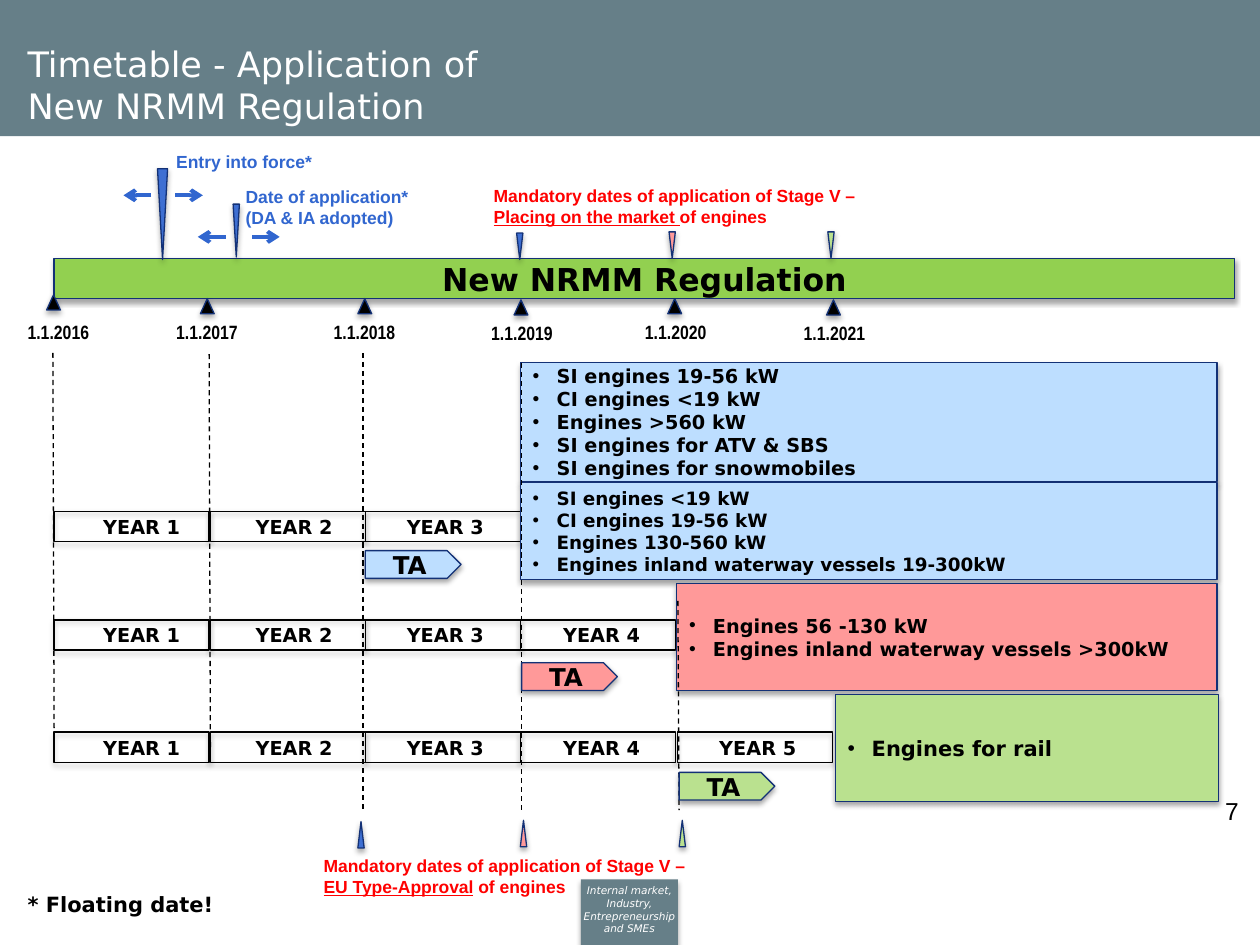
"""Build a one-slide timetable for the application of the New NRMM Regulation."""
from dataclasses import dataclass

from lxml import etree
from pptx import Presentation
from pptx import util as u
from pptx.dml.color import RGBColor
from pptx.enum import dml, shapes, text
from pptx.oxml import ns


@dataclass
class Theme:
    slate: str = "667F88"
    white: str = "FFFFFF"
    black: str = "000000"
    navy: str = "133176"
    lime: str = "92D050"
    cobalt: str = "3E6FD2"
    blue: str = "3166CF"
    sky: str = "BDDEFF"
    rose: str = "FF9999"
    leaf: str = "BAE18F"
    red: str = "FF0000"
    sans: str = "DejaVu Sans"
    arial: str = "Arial"
    narrow: str = "Arial Narrow"
    title: float = 20
    head: float = 18
    large: float = 14
    mid: float = 12
    body: float = 11
    dense: float = 10.5
    note: float = 10
    tiny: float = 6
    thin: float = 0.75
    thick: float = 2.25


theme = Theme()
deck = Presentation()
deck.slide_width, deck.slide_height = u.Inches(10), u.Inches(7.5)
slide = deck.slides.add_slide(deck.slide_layouts[6])
kinds = shapes.MSO_SHAPE
SHADOW = (
    '<a:effectLst xmlns:a="%s"><a:outerShdw blurRad="39400" dist="22900" dir="5400000" rotWithShape="0">'
    '<a:srgbClr val="000000"><a:alpha val="35000"/></a:srgbClr></a:outerShdw></a:effectLst>'
) % ns.nsdecls("a").split('"')[1]


def draw(kind, box, fill=None, line=theme.navy, shade=True, flip=False):
    shape = slide.shapes.add_shape(kind, *map(u.Inches, box))
    shape.shadow.inherit = False
    if fill:
        shape.fill.solid()
        shape.fill.fore_color.rgb = RGBColor.from_string(fill)
    else:
        shape.fill.background()
    if line:
        shape.line.color.rgb = RGBColor.from_string(line)
        shape.line.width = u.Pt(theme.thin)
    else:
        shape.line.fill.background()
    if shade:
        plain = shape._element.spPr.find(ns.qn("a:effectLst"))
        plain.getparent().replace(plain, etree.fromstring(SHADOW))
    if flip:
        shape.rotation = 180
    return shape


def write(words, box=None, shape=None, size=theme.body, face=theme.sans, ink=theme.black,
          bold=True, slant=False, align="LEFT", wrap=False, dots=False):
    host = shape or slide.shapes.add_textbox(*map(u.Inches, box))
    frame = host.text_frame
    frame.word_wrap = wrap
    frame.vertical_anchor = text.MSO_ANCHOR.MIDDLE if shape else text.MSO_ANCHOR.TOP
    for n, line in enumerate(words.split("\n")):
        para = frame.add_paragraph() if n else frame.paragraphs[0]
        para.alignment = getattr(text.PP_ALIGN, align)
        if dots:
            props = para._p.get_or_add_pPr()
            props.set("marL", str(u.Inches(0.19)))
            props.set("indent", str(u.Inches(-0.19)))
            etree.SubElement(props, ns.qn("a:buFont")).set("typeface", theme.arial)
            etree.SubElement(props, ns.qn("a:buChar")).set("char", "•")
        for k, part in enumerate(line.split("|")):
            run = para.add_run()
            run.text = part
            font = run.font
            font.name, font.size = face, u.Pt(size)
            font.bold, font.italic = bold, slant
            font.underline = k % 2 == 1
            font.color.rgb = RGBColor.from_string(ink)


draw(kinds.RECTANGLE, (0, 0, 10, 1.08), theme.slate, None, False)
draw(kinds.RECTANGLE, (4.61, 6.98, 0.77, 0.52), theme.slate, None)
write("Internal market,\nIndustry,\nEntrepreneurship\nand SMEs", (4.52, 6.97, 0.95, 0.53),
      size=theme.tiny, ink=theme.white, bold=False, slant=True, align="CENTER", wrap=True)
write("Timetable - Application of\nNew NRMM Regulation", (0.12, 0.29, 3.92, 0.77),
      size=theme.title, ink=theme.white, bold=False)

bar = draw(kinds.RECTANGLE, (0.43, 2.05, 9.37, 0.32), theme.lime)
write("New NRMM Regulation", shape=bar, size=theme.head, align="CENTER", wrap=True)

starts = (0.43, 1.67, 2.9, 4.13, 5.38)
labels = (0.72, 1.93, 3.13, 4.37, 5.61)
for top, count in ((4.06, 3), (4.92, 4), (5.81, 5)):
    for n in range(count):
        draw(kinds.RECTANGLE, (starts[n], top, 1.23, 0.24), line=theme.black)
        write(f"YEAR {n + 1}", (labels[n], top - 0.02, 0.82, 0.29))

for box, fill, size, words in (
    ((4.13, 2.88, 5.53, 0.94), theme.sky, theme.body,
     "SI engines 19-56 kW\nCI engines <19 kW\nEngines >560 kW\n"
     "SI engines for ATV & SBS\nSI engines for snowmobiles"),
    ((4.13, 3.83, 5.53, 0.77), theme.sky, theme.dense,
     "SI engines <19 kW\nCI engines 19-56 kW\nEngines 130-560 kW\n"
     "Engines inland waterway vessels 19-300kW"),
    ((5.37, 4.63, 4.29, 0.85), theme.rose, theme.body,
     "Engines 56 -130 kW\nEngines inland waterway vessels >300kW"),
    ((6.63, 5.51, 3.04, 0.85), theme.leaf, theme.mid, "Engines for rail"),
):
    write(words, shape=draw(kinds.RECTANGLE, box, fill), size=size, wrap=True, dots=True)

for n, (mark, left, drop) in enumerate((
    (0.37, 0.12, 0), (1.59, 1.3, 0), (2.84, 2.55, 0),
    (4.08, 3.8, 0.01), (5.3, 5.02, 0), (6.56, 6.28, 0.01),
)):
    draw(kinds.ISOSCELES_TRIANGLE, (mark, 2.37 + drop if n else 2.34, 0.11, 0.12), theme.black)
    write(f"1.1.{2016 + n}", (left, 2.49 + drop, 0.69, 0.29), face=theme.narrow)

for box, fill, flip in (
    ((1.25, 1.34, 0.08, 0.72), theme.cobalt, True),
    ((1.85, 1.62, 0.05, 0.42), theme.cobalt, True),
    ((4.1, 1.85, 0.05, 0.21), theme.cobalt, True),
    ((5.31, 1.84, 0.05, 0.21), theme.rose, True),
    ((6.57, 1.84, 0.05, 0.21), theme.leaf, True),
    ((2.84, 6.52, 0.05, 0.21), theme.cobalt, False),
    ((4.13, 6.51, 0.05, 0.21), theme.rose, False),
    ((5.39, 6.51, 0.05, 0.21), theme.leaf, False),
):
    draw(kinds.ISOSCELES_TRIANGLE, box, fill, flip=flip)

dashes = ((0.42, 2.8, 0.43, 5.93), (1.66, 2.81, 1.67, 5.93), (2.88, 2.8, 2.88, 6.43),
          (4.14, 2.88, 4.14, 6.43), (5.38, 4.77, 5.39, 6.43))
arrows = ((1.39, 1.55, 1.61, 1.55), (1.2, 1.55, 0.98, 1.55),
          (2, 1.88, 2.22, 1.88), (1.79, 1.88, 1.57, 1.88))
for ends in dashes + arrows:
    link = slide.shapes.add_connector(shapes.MSO_CONNECTOR.STRAIGHT, *map(u.Inches, ends))
    arrow = ends in arrows
    link.line.color.rgb = RGBColor.from_string(theme.blue if arrow else theme.black)
    link.line.width = u.Pt(theme.thick if arrow else theme.thin)
    if arrow:
        etree.SubElement(link.line._get_or_add_ln(), ns.qn("a:tailEnd")).set("type", "arrow")
    else:
        link.line.dash_style = dml.MSO_LINE.DASH
    etree.SubElement(link._element.spPr, ns.qn("a:effectLst"))

for left, top, fill in ((2.9, 4.37, theme.sky), (4.14, 5.26, theme.rose), (5.39, 6.13, theme.leaf)):
    tag = draw(kinds.PENTAGON, (left, top, 0.76, 0.22), fill)
    write("TA", shape=tag, size=theme.large, align="CENTER", wrap=True)

for words, box, ink, wrap in (
    ("Entry into force*", (1.3, 1.15, 1.48, 0.27), theme.blue, True),
    ("Date of application*\n(DA & IA adopted)", (1.85, 1.43, 1.51, 0.44), theme.blue, False),
    ("Mandatory dates of application of Stage V – |Placing on the market |of engines",
     (3.82, 1.42, 3.31, 0.44), theme.red, True),
    ("Mandatory dates of application of Stage V – |EU Type-Approval| of engines",
     (2.47, 6.74, 3.15, 0.44), theme.red, True),
):
    write(words, box, size=theme.note, face=theme.arial, ink=ink, wrap=wrap)

write("7", (9.49, 6.27, 0.44, 0.52), size=theme.large, face=theme.arial,
      bold=False, align="RIGHT", wrap=True)
write("* Floating date!", (0.12, 7.03, 1.69, 0.3), size=theme.mid)
deck.save("out.pptx")
